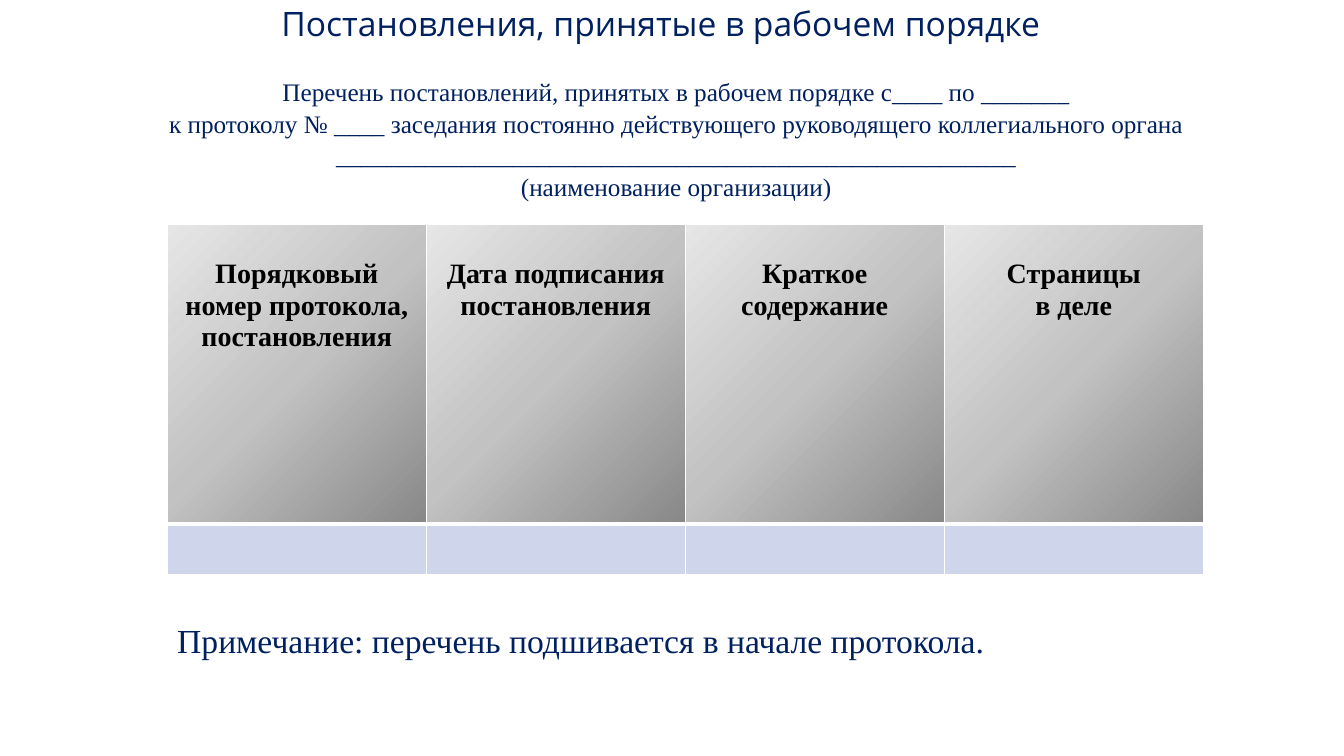
from lxml import etree
from pptx import Presentation
from pptx.dml.color import RGBColor
from pptx.enum.text import MSO_ANCHOR, PP_ALIGN
from pptx.oxml import parse_xml
from pptx.oxml.ns import nsdecls, qn
from pptx.util import Pt

LEFT, CENTER = PP_ALIGN.LEFT, PP_ALIGN.CENTER
TOP = MSO_ANCHOR.TOP
NAVY = RGBColor(0x00, 0x20, 0x60)
BLACK = RGBColor(0x00, 0x00, 0x00)
WHITE = RGBColor(0xFF, 0xFF, 0xFF)
PALE_BLUE = RGBColor(0xCF, 0xD5, 0xEA)
GRADIENT = [
    (0, RGBColor(0x89, 0x88, 0x88)),
    (50, RGBColor(0xC3, 0xC2, 0xC2)),
    (100, RGBColor(0xE7, 0xE6, 0xE6)),
]
SERIF = "Times New Roman"

# Content
TITLE = "Постановления, принятые в рабочем порядке"
HEADING = [
    "Перечень постановлений, принятых в рабочем порядке с____ по _______",
    "к протоколу № ____ заседания постоянно действующего руководящего коллегиального органа",
    "_" * 54,
    "(наименование организации)",
]
COLUMNS = [
    ["Порядковый номер протокола, постановления"],
    ["Дата подписания постановления"],
    ["Краткое содержание"],
    ["Страницы", "в деле"],
]
NOTE = ["Примечание: перечень подшивается в начале протокола."]

# Formats
TITLE_FONT = {"name": "Open Sans", "size": Pt(24), "bold": False}
HEADING_FONT = {"name": SERIF, "size": Pt(18)}
HEADER_FONT = {"name": SERIF, "size": Pt(20), "bold": True}
NOTE_FONT = {"name": SERIF, "size": Pt(24)}

# Table layout in points
TABLE_LEFT, TABLE_TOP = 119.5, 160
COLUMN_WIDTH = 185
ROW_HEIGHTS = [214.5, 36]
HEADER_TEXT_TOP = 25


def write(frame, lines, font, color, align, gap=0):
    frame.word_wrap = True
    for index, line in enumerate(lines):
        paragraph = frame.paragraphs[0] if index == 0 else frame.add_paragraph()
        paragraph.text = line
        paragraph.alignment = align
        paragraph.space_before = Pt(0)
        paragraph.space_after = Pt(gap)
        for name, value in font.items():
            setattr(paragraph.font, name, value)
        paragraph.font.color.rgb = color


def add_text(slide, box, *text):
    shape = slide.shapes.add_textbox(*[Pt(value) for value in box])
    write(shape.text_frame, *text)


def set_borders(cell, bottom):
    properties = cell._tc.get_or_add_tcPr()
    for side, width in (("L", 1), ("R", 1), ("T", 1), ("B", bottom)):
        line = etree.SubElement(properties, qn(f"a:ln{side}"), w=str(Pt(width)))
        fill = etree.SubElement(line, qn("a:solidFill"))
        etree.SubElement(fill, qn("a:srgbClr"), val=str(WHITE))


def fill_gradient(cell):
    stops = "".join(
        f'<a:gs pos="{position * 1000}"><a:srgbClr val="{color}"/></a:gs>'
        for position, color in GRADIENT
    )
    cell._tc.get_or_add_tcPr().append(parse_xml(
        f'<a:gradFill {nsdecls("a")} rotWithShape="1"><a:gsLst>{stops}</a:gsLst>'
        '<a:path path="circle"><a:fillToRect l="100000" t="100000"/></a:path>'
        '<a:tileRect r="-100000" b="-100000"/></a:gradFill>'
    ))


presentation = Presentation()
presentation.slide_width, presentation.slide_height = Pt(960), Pt(540)
slide = presentation.slides.add_slide(presentation.slide_layouts[5])

# Title
title = slide.shapes.title
title.left, title.top, title.width, title.height = Pt(186.5), Pt(0), Pt(773.5), Pt(100.8)
title.text_frame.vertical_anchor = TOP
title.text_frame.margin_left = Pt(14.5)
title.text_frame.margin_top = Pt(5.5)
write(title.text_frame, [TITLE], TITLE_FONT, NAVY, LEFT)
title.text_frame.paragraphs[0].line_spacing = 0.9

# Table with a gradient header and one blank row
table = slide.shapes.add_table(
    len(ROW_HEIGHTS), len(COLUMNS), Pt(TABLE_LEFT), Pt(TABLE_TOP),
    Pt(COLUMN_WIDTH * len(COLUMNS)), Pt(sum(ROW_HEIGHTS)),
).table
for row, height in zip(table.rows, ROW_HEIGHTS):
    row.height = Pt(height)
for index, lines in enumerate(COLUMNS):
    table.columns[index].width = Pt(COLUMN_WIDTH)
    header, blank = table.cell(0, index), table.cell(1, index)
    header.margin_top = Pt(HEADER_TEXT_TOP)
    write(header.text_frame, lines, HEADER_FONT, BLACK, CENTER)
    set_borders(header, 3)
    fill_gradient(header)
    set_borders(blank, 1)
    blank.fill.solid()
    blank.fill.fore_color.rgb = PALE_BLUE

# Heading above the table and note below it
add_text(slide, (6, 51, 954, 94.5), HEADING, HEADING_FONT, NAVY, CENTER, 1)
add_text(slide, (TABLE_LEFT, 439, 656.5, 36), NOTE, NOTE_FONT, NAVY, LEFT)

presentation.save("out.pptx")
